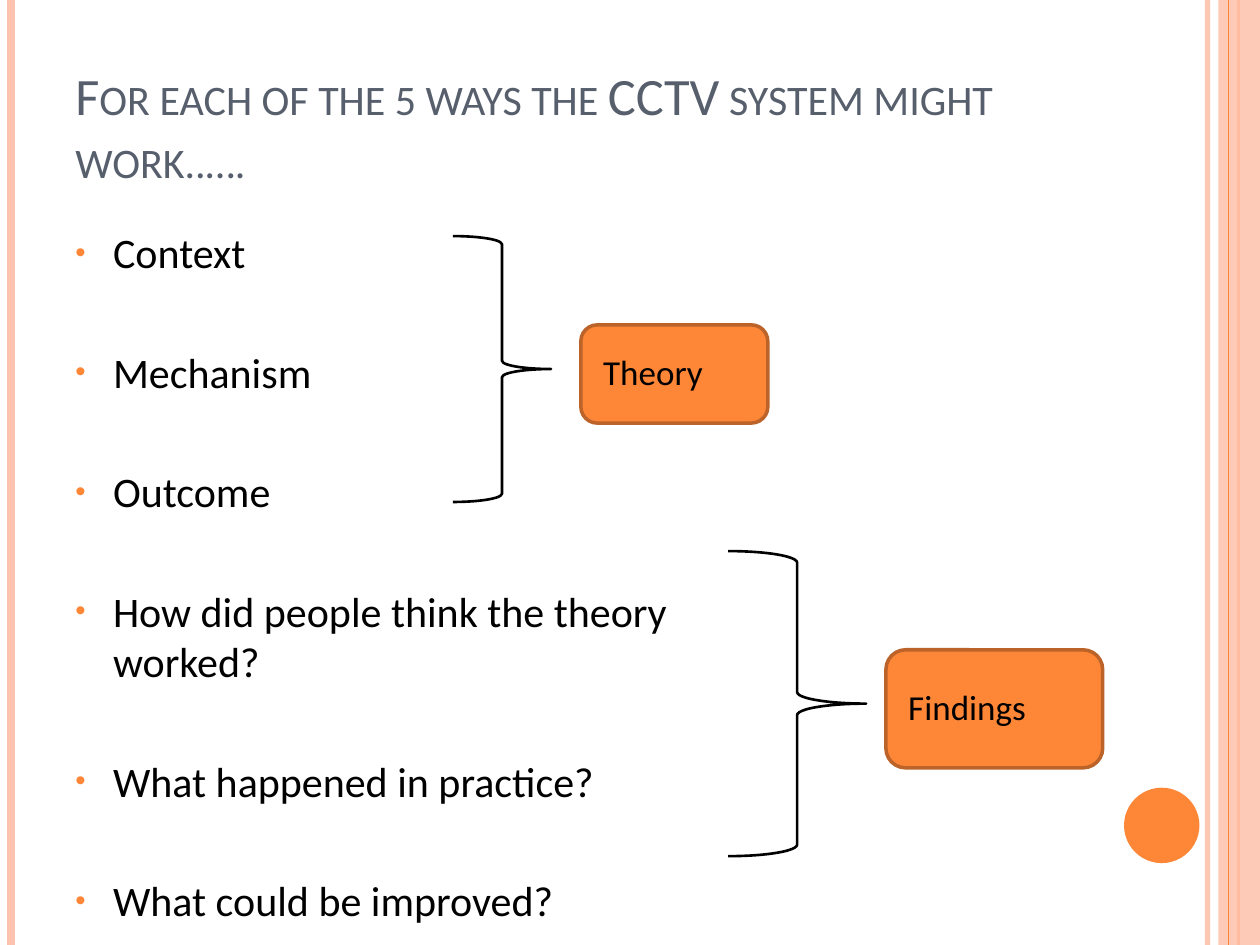
from lxml import etree
from pptx import Presentation
from pptx.dml.color import RGBColor
from pptx.enum import shapes, text
from pptx.oxml.ns import qn
from pptx.util import Cm, Pt

PEACH = RGBColor(0xFE, 0xC3, 0xAE)
ORANGE = RGBColor(0xFE, 0x86, 0x37)
RUST = RGBColor(0xBC, 0x63, 0x29)
SLATE = RGBColor(0x57, 0x5F, 0x6D)
BLACK = RGBColor(0, 0, 0)
WIDE, HIGH = 25.4, 19.05
KIND = shapes.MSO_SHAPE
POINTS = [
    "Context",
    "Mechanism",
    "Outcome",
    "How did people think the theory \vworked?",
    "What happened in practice?",
    "What could be improved?",
]


def fade(item, share):
    color = next(item._element.spPr.iter(qn("a:srgbClr")))
    etree.SubElement(color, qn("a:alpha")).set("val", str(share * 1000))


def add_rule(slide, x, color, width):
    rule = slide.shapes.add_connector(
        shapes.MSO_CONNECTOR.STRAIGHT, Cm(x), Cm(0), Cm(x), Cm(HIGH))
    rule.line.color.rgb = color
    rule.line.width = Pt(width)
    etree.SubElement(rule._element.spPr, qn("a:effectLst"))
    return rule


def add_form(slide, kind, box, fill=None, line=None, width=2):
    form = slide.shapes.add_shape(kind, *map(Cm, box))
    form.shadow.inherit = False
    if fill is None:
        form.fill.background()
    else:
        form.fill.solid()
        form.fill.fore_color.rgb = fill
    if line is None:
        form.line.fill.background()
    else:
        form.line.color.rgb = line
        form.line.width = Pt(width)
    return form


def style(para, size, color=BLACK):
    para.font.name = "Calibri"
    para.font.size = Pt(size)
    para.font.color.rgb = color


def add_text(slide, box, words, size, color=BLACK):
    frame = slide.shapes.add_textbox(*map(Cm, box)).text_frame
    frame.word_wrap = True
    para = frame.paragraphs[0]
    para.text = words
    style(para, size, color)
    return frame


def add_title(slide):
    frame = add_text(
        slide, (1.27, 0.76, 20.75, 3.18),
        "For each of the 5 ways the CCTV system might work..….", 30, SLATE)
    frame.vertical_anchor = text.MSO_ANCHOR.BOTTOM
    frame.paragraphs[0].runs[0]._r.get_or_add_rPr().set("cap", "small")


def add_bullet(para):
    props = para._p.get_or_add_pPr()
    indent = Cm(0.76)
    props.set("marL", str(indent))
    props.set("indent", str(-indent))
    color = etree.SubElement(props, qn("a:buClr"))
    etree.SubElement(color, qn("a:srgbClr")).set("val", str(ORANGE))
    etree.SubElement(props, qn("a:buSzPct")).set("val", "70000")
    etree.SubElement(props, qn("a:buFont")).set("typeface", "Arial")
    etree.SubElement(props, qn("a:buChar")).set("char", "•")


def add_list(slide):
    box = slide.shapes.add_textbox(Cm(1.27), Cm(4.45), Cm(20.75), Cm(13.55))
    frame = box.text_frame
    frame.word_wrap = True
    for i, words in enumerate(POINTS):
        para = frame.add_paragraph() if i else frame.paragraphs[0]
        para.text = words
        para.space_after = Pt(39.5)
        add_bullet(para)
        style(para, 24)


def add_group(slide, brace, card, label, words):
    add_form(slide, KIND.RIGHT_BRACE, brace, line=BLACK, width=1.5)
    add_form(slide, KIND.ROUNDED_RECTANGLE, card, ORANGE, RUST)
    add_text(slide, label, words, 20)


def add_frame(slide):
    fade(add_rule(slide, 24.34, PEACH, 3), 93)
    add_rule(slide, 0.22, PEACH, 4.5)
    add_rule(slide, 24.97, ORANGE, 1.5)
    fade(add_form(slide, KIND.RECTANGLE, (24.56, 0, 0.84, HIGH), PEACH), 87)
    add_rule(slide, 24.77, ORANGE, 0.75)
    add_form(slide, KIND.OVAL, (22.66, 15.88, 1.52, 1.52), ORANGE)


def main():
    deck = Presentation()
    deck.slide_width, deck.slide_height = Cm(WIDE), Cm(HIGH)
    slide = deck.slides.add_slide(deck.slide_layouts[6])
    add_frame(slide)
    add_title(slide)
    add_list(slide)
    add_group(slide, (9.13, 4.76, 1.98, 5.36), (11.71, 6.55, 3.77, 1.98),
              (11.91, 6.95, 2.59, 1.11), "Theory")
    add_group(slide, (14.68, 11.11, 2.78, 6.15), (17.86, 13.1, 4.37, 2.38),
              (18.06, 13.69, 3.38, 1.11), "Findings")
    deck.save("out.pptx")


if __name__ == "__main__":
    main()
